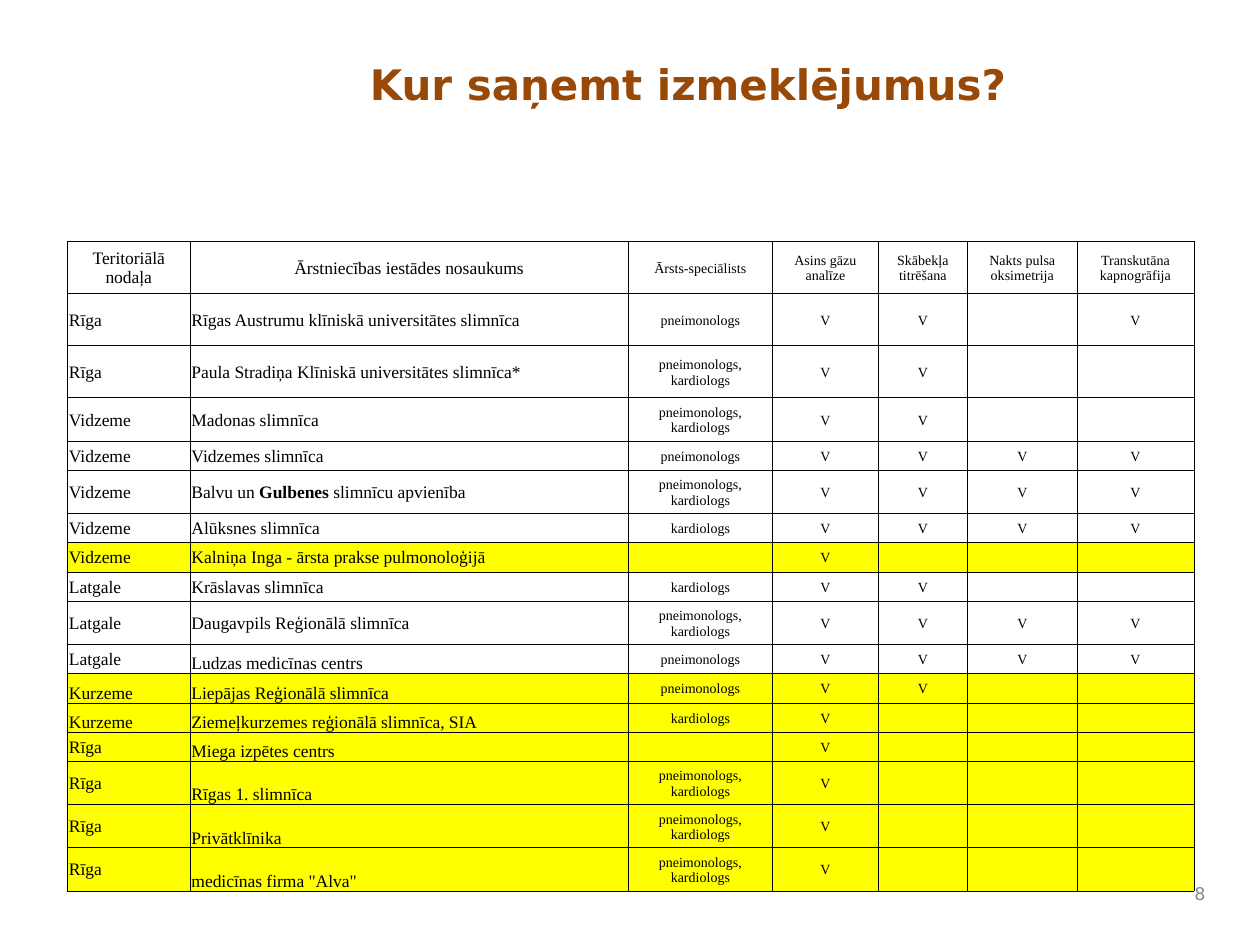
from lxml.etree import SubElement
from pptx import Presentation
from pptx.dml.color import RGBColor
from pptx.enum.text import MSO_ANCHOR, PP_ALIGN
from pptx.oxml import parse_xml
from pptx.oxml.ns import nsdecls, qn
from pptx.util import Cm, Pt

HUES = {"title": "984807", "page": "898989", "ink": "000000", "mark": "FFFF00"}
SANS, SERIF = "DejaVu Sans", "Times New Roman"
LUNG, HEART = "pneimonologs", "kardiologs"
BOTH = f"{LUNG}, {HEART}"
WIDTHS = [2.47, 8.83, 2.92, 2.12, 1.81, 2.2, 2.36]
TALL, MID, LOW = 1.05, 0.87, 0.59
HEAD = ["Teritoriālā nodaļa", "Ārstniecības iestādes nosaukums", "Ārsts-speciālists",
        "Asins gāzu analīze", "Skābekļa titrēšana", "Nakts pulsa oksimetrija",
        "Transkutāna kapnogrāfija"]
SITES = [
    ("Rīga", "Rīgas Austrumu klīniskā universitātes slimnīca", LUNG, "VV-V"),
    ("Rīga", "Paula Stradiņa Klīniskā universitātes slimnīca*", BOTH, "VV--"),
    ("Vidzeme", "Madonas slimnīca", BOTH, "VV--"),
    ("Vidzeme", "Vidzemes slimnīca", LUNG, "VVVV"),
    ("Vidzeme", "Balvu un *Gulbenes* slimnīcu apvienība", BOTH, "VVVV"),
    ("Vidzeme", "Alūksnes slimnīca", HEART, "VVVV"),
    ("Vidzeme", "Kalniņa Inga - ārsta prakse pulmonoloģijā", "", "V---"),
    ("Latgale", "Krāslavas slimnīca", HEART, "VV--"),
    ("Latgale", "Daugavpils Reģionālā slimnīca", BOTH, "VVVV"),
    ("Latgale", "Ludzas medicīnas centrs", LUNG, "VVVV"),
    ("Kurzeme", "Liepājas Reģionālā slimnīca", LUNG, "VV--"),
    ("Kurzeme", "Ziemeļkurzemes reģionālā slimnīca, SIA", HEART, "V---"),
    ("Rīga", "Miega izpētes centrs", "", "V---"),
    ("Rīga", "Rīgas 1. slimnīca", BOTH, "V---"),
    ("Rīga", "Privātklīnika", BOTH, "V---"),
    ("Rīga", 'medicīnas firma "Alva"', BOTH, "V---"),
]


class Deck:
    """Holds the style and the current slide, and adds each kind of element."""

    def __init__(self):
        self.deck = Presentation()
        self.deck.slide_width, self.deck.slide_height = Cm(25.4), Cm(19.05)
        self.slide = self.deck.slides.add_slide(self.deck.slide_layouts[5])

    def style(self, para, face, size, hue, align, bold=None):
        para.alignment = align
        font = para.font
        font.name, font.size, font.bold = face, Pt(size), bold
        font.color.rgb = RGBColor.from_string(HUES[hue])

    def title(self, text, left, top, width, height):
        box = self.slide.shapes.title
        box.left, box.top, box.width, box.height = map(Cm, (left, top, width, height))
        frame = box.text_frame
        frame.text = text
        frame.vertical_anchor = MSO_ANCHOR.TOP
        self.style(frame.paragraphs[0], SANS, 24, "title", PP_ALIGN.LEFT, True)

    def page(self, text, left, top, width, height):
        box = self.slide.shapes.add_textbox(*map(Cm, (left, top, width, height)))
        frame = box.text_frame
        frame.word_wrap = True
        frame.vertical_anchor = MSO_ANCHOR.MIDDLE
        frame.text = text
        para = frame.paragraphs[0]
        self.style(para, SANS, 10, "page", PP_ALIGN.RIGHT)
        para.space_after = Pt(6)

    def cell(self, cell, text, size, align, anchor, fill):
        cell.margin_left = cell.margin_right = cell.margin_top = Cm(0.03)
        cell.margin_bottom = 0
        cell.vertical_anchor = anchor
        para = cell.text_frame.paragraphs[0]
        self.style(para, SERIF, size, "ink", align)
        for num, part in enumerate(text.split("*") if text.count("*") == 2 else [text]):
            if part:
                run = para.add_run()
                run.text = part
                if num % 2:
                    run.font.bold = True
        if not text:
            SubElement(para._p, qn("a:endParaRPr"), sz=str(size * 100))
        for side in "LRTB":
            cell._tc.get_or_add_tcPr().append(parse_xml(
                f'<a:ln{side} {nsdecls("a")} w="{Pt(0.5)}"><a:solidFill>'
                f'<a:srgbClr val="{HUES["ink"]}"/></a:solidFill></a:ln{side}>'))
        if fill:
            cell.fill.solid()
            cell.fill.fore_color.rgb = RGBColor.from_string(HUES[fill])
        else:
            cell.fill.background()

    def table(self, left, top):
        rows = [HEAD] + [[*site[:3], *site[3].replace("-", " ")] for site in SITES]
        highs = [TALL if num < 3 else MID if row[2] == BOTH else LOW
                 for num, row in enumerate(rows)]
        grid = self.slide.shapes.add_table(
            len(rows), len(WIDTHS), Cm(left), Cm(top), Cm(sum(WIDTHS)), Cm(sum(highs))).table
        grid.first_row = grid.horz_banding = False
        for col, width in zip(grid.columns, WIDTHS):
            col.width = Cm(width)
        for y, row in enumerate(rows):
            grid.rows[y].height = Cm(highs[y])
            fill = "mark" if y == 7 or y > 10 else None
            for x, text in enumerate(row):
                low = x == 1 and y > 9 or text == "Kurzeme"
                self.cell(grid.cell(y, x), text.strip(), 10 if x < 2 else 8,
                          PP_ALIGN.CENTER if y == 0 or x > 1 else PP_ALIGN.LEFT,
                          MSO_ANCHOR.BOTTOM if low else MSO_ANCHOR.MIDDLE, fill)


def main():
    show = Deck()
    show.title("Kur saņemt izmeklējumus?", 7.2, 1.06, 16.93, 2.86)
    show.page("8", 23.7, 17.58, 0.85, 0.85)
    show.table(1.36, 4.87)
    show.deck.save("out.pptx")


if __name__ == "__main__":
    main()
